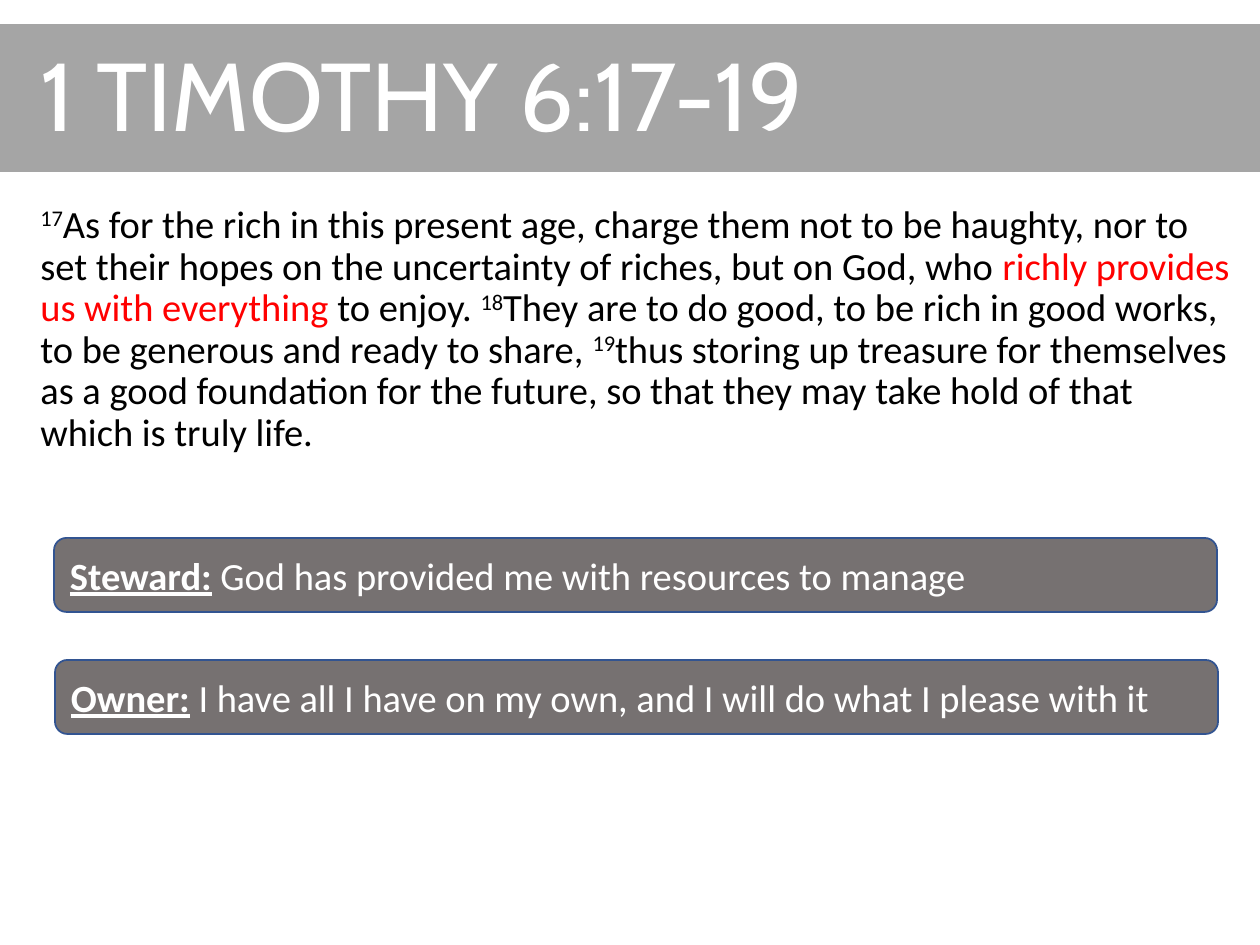
from dataclasses import dataclass

from lxml.etree import SubElement
from pptx import Presentation
from pptx.dml.color import RGBColor
from pptx.enum.shapes import MSO_SHAPE as Shape
from pptx.enum.text import MSO_ANCHOR as Anchor, PP_ALIGN as Align
from pptx.oxml.ns import qn
from pptx.util import Emu, Pt

PX = 914400 / 126


@dataclass(frozen=True)
class Theme:
    white: str = "FFFFFF"
    black: str = "000000"
    highlight: str = "FF0000"
    band: str = "808080"
    box: str = "767171"
    box_line: str = "325491"
    title_font: str = "Cabin"
    body_font: str = "Calibri"
    title_size: int = 55
    body_size: int = 22


THEME = Theme()
TITLE = {"name": THEME.title_font, "size": Pt(THEME.title_size), "color": THEME.white}
BODY = {"name": THEME.body_font, "size": Pt(THEME.body_size), "color": THEME.black}
VERSE = BODY | {"baseline": 30000}
HIGHLIGHT = BODY | {"color": THEME.highlight}
BOX_TEXT = BODY | {"color": THEME.white}
BOX_LABEL = BOX_TEXT | {"bold": True, "underline": True}

PASSAGE = [
    ("17", VERSE),
    ("As for the rich in this present age, charge them not to be haughty, nor to "
     "set their hopes on the uncertainty of riches, but on God, who ", BODY),
    ("richly provides us with everything ", HIGHLIGHT),
    ("to enjoy. ", BODY),
    ("18", VERSE),
    ("They are to do good, to be rich in good works, to be generous and ready to share, ", BODY),
    ("19", VERSE),
    ("thus storing up treasure for themselves as a good foundation for the future, "
     "so that they may take hold of that which is truly life.", BODY),
]
ROLES = [
    (54, 538, "Steward:", " God has provided me with resources to manage"),
    (55, 660, "Owner:", " I have all I have on my own, and I will do what I please with it"),
]


def px(*lengths):
    return [Emu(round(length * PX)) for length in lengths]


def write_runs(paragraph, runs):
    for text, style in runs:
        run = paragraph.add_run()
        run.text = text
        for key, value in style.items():
            if key == "color":
                run.font.color.rgb = RGBColor.from_string(value)
            elif key == "baseline":
                run._r.get_or_add_rPr().set("baseline", str(value))
            else:
                setattr(run.font, key, value)


def add_text(slide, bounds, runs, anchor):
    frame = slide.shapes.add_textbox(*px(*bounds)).text_frame
    frame.word_wrap = True
    frame.vertical_anchor = anchor
    paragraph = frame.paragraphs[0]
    paragraph.line_spacing = 0.9
    write_runs(paragraph, runs)


def add_filled_shape(slide, kind, bounds, color):
    shape = slide.shapes.add_shape(kind, *px(*bounds))
    shape.shadow.inherit = False
    shape.fill.solid()
    shape.fill.fore_color.rgb = RGBColor.from_string(color)
    return shape


def add_title_band(slide):
    """Draw the band at 70 % opacity, past both slide edges."""
    band = add_filled_shape(slide, Shape.RECTANGLE, (-28, 24, 1304, 148), THEME.band)
    band.line.fill.background()
    color = band._element.spPr.find(qn("a:solidFill")).find(qn("a:srgbClr"))
    SubElement(color, qn("a:alpha"), val="70000")


def add_role_box(slide, left, top, label, text):
    box = add_filled_shape(slide, Shape.ROUNDED_RECTANGLE, (left, top, 1163, 74), THEME.box)
    box.line.color.rgb = RGBColor.from_string(THEME.box_line)
    box.line.width = Pt(1)
    box.text_frame.word_wrap = True
    box.text_frame.vertical_anchor = Anchor.MIDDLE
    paragraph = box.text_frame.paragraphs[0]
    paragraph.alignment = Align.LEFT
    write_runs(paragraph, [(label, BOX_LABEL), (text, BOX_TEXT)])


def main():
    presentation = Presentation()
    presentation.slide_width, presentation.slide_height = px(1260, 945)
    slide = presentation.slides.add_slide(presentation.slide_layouts[6])
    add_title_band(slide)
    add_text(slide, (28, 9, 1227, 183), [("1 TIMOTHY 6:17-19", TITLE)], Anchor.MIDDLE)
    add_text(slide, (28, 199, 1215, 470), PASSAGE, Anchor.TOP)
    for role in ROLES:
        add_role_box(slide, *role)
    presentation.save("out.pptx")


if __name__ == "__main__":
    main()
